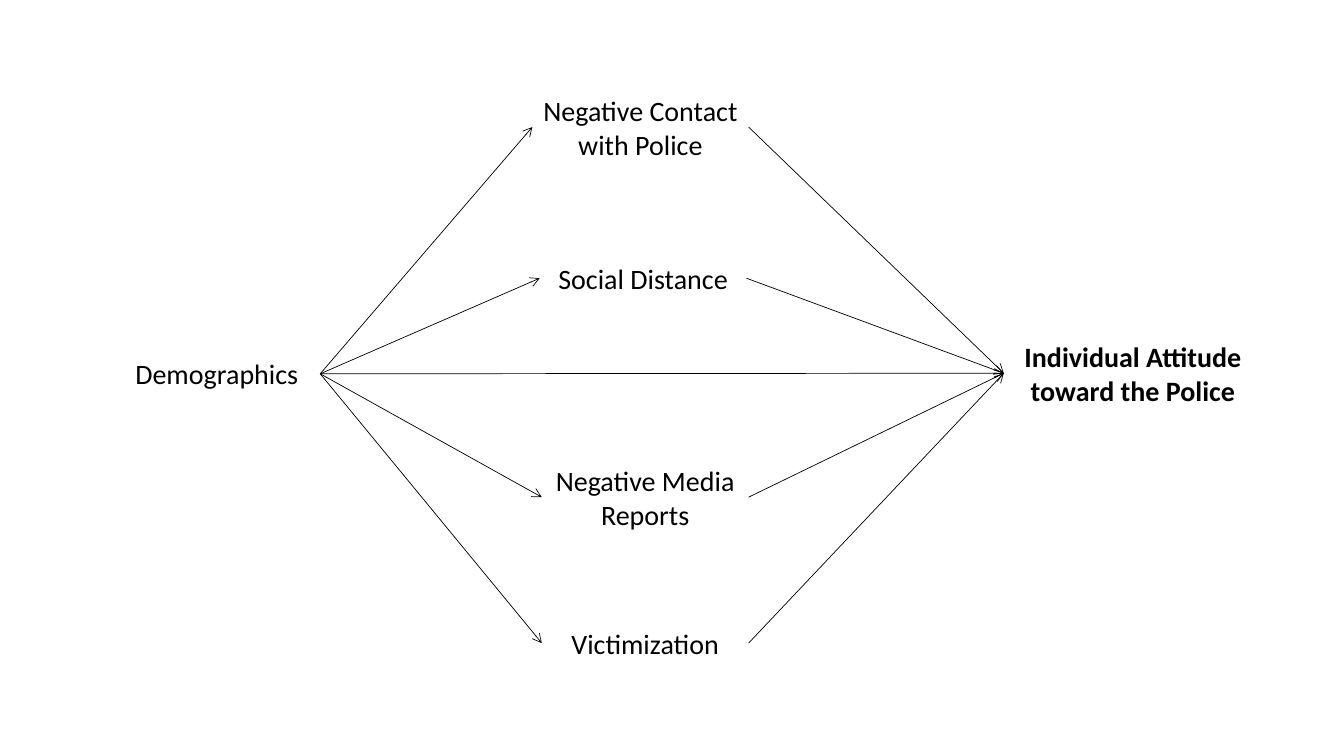
"""Build a path diagram linking demographics to attitudes toward the police."""
from lxml import etree
from pptx import Presentation
from pptx.dml.color import RGBColor
from pptx.enum.shapes import MSO_CONNECTOR, MSO_SHAPE
from pptx.enum.text import MSO_ANCHOR, PP_ALIGN
from pptx.oxml.ns import qn
from pptx.util import Emu, Pt

RECTANGLE = MSO_SHAPE.RECTANGLE
STRAIGHT = MSO_CONNECTOR.STRAIGHT
MIDDLE = MSO_ANCHOR.MIDDLE
CENTER = PP_ALIGN.CENTER
LEFT_SIDE, RIGHT_SIDE = 1, 3
EMU_PER_PX = 9525
COLORS = {"background": "FFFFFF", "ink": "000000"}
FONT = "Calibri"

CAUSE = ("Demographics", 108, 310, 197, 92)
OUTCOME = ("Individual Attitude toward the Police", 956, 303, 246, 105)
MEDIATORS = [
    ("Negative Contact with Police", 507, 75, 206, 92),
    ("Social Distance", 514, 219, 197, 92),
    ("Negative Media Reports", 516, 434, 197, 79),
    ("Victimization", 516, 574, 197, 77),
]


def px(length):
    """Turn pixels into EMU."""
    return Emu(length * EMU_PER_PX)


def color(name):
    """Look up a named colour."""
    return RGBColor.from_string(COLORS[name])


def add_box(slide, text, left, top, width, height, bold=False):
    """Add a white box with centred text."""
    shape = slide.shapes.add_shape(RECTANGLE, px(left), px(top), px(width), px(height))
    shape.shadow.inherit = False
    shape.fill.solid()
    shape.fill.fore_color.rgb = color("background")
    shape.line.color.rgb = color("background")
    shape.line.width = Pt(0.75)
    text_frame = shape.text_frame
    text_frame.text = text
    text_frame.word_wrap = True
    text_frame.vertical_anchor = MIDDLE
    paragraph = text_frame.paragraphs[0]
    paragraph.alignment = CENTER
    font = paragraph.runs[0].font
    font.name = FONT
    font.size = Pt(20)
    font.bold = bold
    font.color.rgb = color("ink")
    return shape


def add_arrow(slide, source, target):
    """Join the right side of one box to the left side of another."""
    connector = slide.shapes.add_connector(STRAIGHT, 0, 0, 0, 0)
    connector.begin_connect(source, RIGHT_SIDE)
    connector.end_connect(target, LEFT_SIDE)
    connector.line.color.rgb = color("ink")
    connector.line.width = Pt(0.5)
    properties = connector._element.spPr
    etree.SubElement(properties.find(qn("a:ln")), qn("a:tailEnd"), type="arrow")
    etree.SubElement(properties, qn("a:effectLst"))


def main():
    """Draw the diagram and save it."""
    presentation = Presentation()
    presentation.slide_width = px(1280)
    presentation.slide_height = px(720)
    slide = presentation.slides.add_slide(presentation.slide_layouts[6])
    cause = add_box(slide, *CAUSE)
    outcome = add_box(slide, *OUTCOME, bold=True)
    mediators = [add_box(slide, *mediator) for mediator in MEDIATORS]
    for mediator in mediators:
        add_arrow(slide, cause, mediator)
        add_arrow(slide, mediator, outcome)
    add_arrow(slide, cause, outcome)
    presentation.save("out.pptx")


if __name__ == "__main__":
    main()
